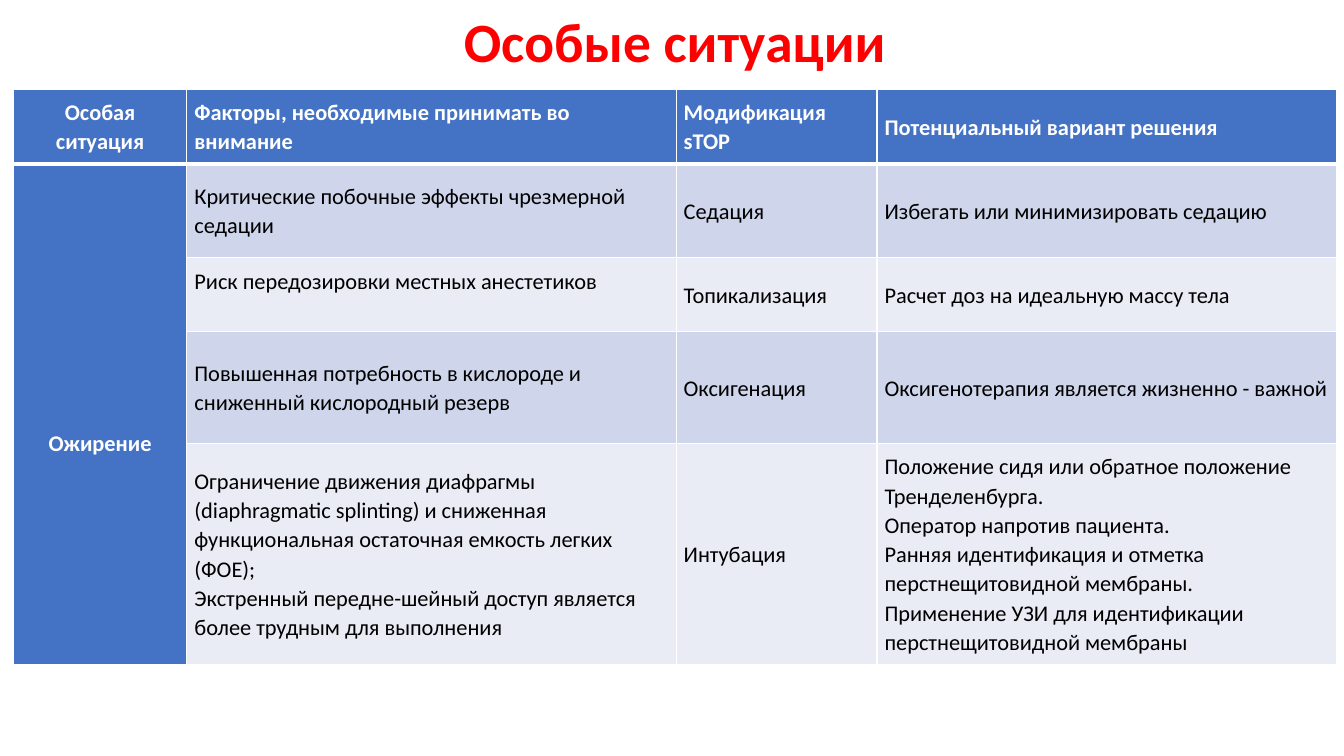
from lxml import etree
from pptx import Presentation
from pptx import util as u
from pptx.dml.color import RGBColor
from pptx.enum import text
from pptx.oxml.ns import qn

HUES = {"title": "FF0000", "head": "4472C4", "odd": "CFD5EA",
        "even": "E9EBF5", "ink": "000000", "white": "FFFFFF"}
COLS = [124, 349.5, 143.5, 328]
ROWS = [53, 67, 53, 80, 157.5]
HEAD = ["Особая ситуация", "Факторы, необходимые принимать во внимание",
        "Модификация sTOP", "Потенциальный вариант решения"]
BODY = [
    ["Ожирение", "Критические побочные эффекты чрезмерной седации",
     "Седация", "Избегать или минимизировать седацию"],
    ["", "Риск передозировки местных анестетиков",
     "Топикализация", "Расчет доз на идеальную массу тела"],
    ["", "Повышенная потребность в кислороде и сниженный кислородный резерв",
     "Оксигенация", "Оксигенотерапия является жизненно - важной"],
    ["", "Ограничение движения диафрагмы (diaphragmatic splinting) и сниженная "
     "функциональная остаточная емкость легких (ФОЕ);\n"
     "Экстренный передне-шейный доступ является более трудным для выполнения",
     "Интубация",
     "Положение сидя или обратное положение Тренделенбурга.\n"
     "Оператор напротив пациента.\n"
     "Ранняя идентификация и отметка перстнещитовидной мембраны.\n"
     "Применение УЗИ для идентификации перстнещитовидной мембраны"],
]


class Deck:
    font = "Calibri"
    size = 16
    pad = 5.4

    def __init__(self, wide, high):
        self.prs = Presentation()
        self.prs.slide_width, self.prs.slide_height = u.Pt(wide), u.Pt(high)
        self.slide = self.prs.slides.add_slide(self.prs.slide_layouts[5])

    def style(self, frame, size, hue, bold, mid, gap):
        for para in frame.paragraphs:
            para.line_spacing = gap
            para.alignment = text.PP_ALIGN.CENTER if mid else text.PP_ALIGN.LEFT
            for run in para.runs:
                run.font.name, run.font.size = self.font, u.Pt(size)
                run.font.bold = bold
                run.font.color.rgb = RGBColor.from_string(HUES[hue])

    def title(self, words, left, top, wide, high):
        box = self.slide.shapes.title
        box.left, box.top = u.Pt(left), u.Pt(top)
        box.width, box.height = u.Pt(wide), u.Pt(high)
        box.text_frame.text = words
        box.text_frame.vertical_anchor = text.MSO_ANCHOR.MIDDLE
        self.style(box.text_frame, 39.6, "title", True, True, 0.9)

    def edges(self, cell, row):
        """Draw white borders, with a thick rule under the header row."""
        props = cell._tc.get_or_add_tcPr()
        thick = {0: "lnB", 1: "lnT"}.get(row)
        for spot, side in enumerate(["lnL", "lnR", "lnT", "lnB"]):
            width = u.Pt(3 if side == thick else 1)
            line = etree.Element(qn("a:" + side), w=str(int(width)))
            fill = etree.SubElement(line, qn("a:solidFill"))
            etree.SubElement(fill, qn("a:srgbClr"), val=HUES["white"])
            props.insert(spot, line)

    def cell(self, cell, words, row, col):
        head = row == 0 or col == 0
        cell.fill.solid()
        hue = "head" if head else "odd" if row % 2 else "even"
        cell.fill.fore_color.rgb = RGBColor.from_string(HUES[hue])
        cell.vertical_anchor = text.MSO_ANCHOR.MIDDLE
        cell.margin_left = cell.margin_right = u.Pt(self.pad)
        cell.margin_top = cell.margin_bottom = u.Pt(self.pad)
        cell.text_frame.text = words
        self.style(cell.text_frame, self.size, "white" if head else "ink",
                   head, col == 0, 1.07)
        self.edges(cell, row)

    def table(self, data, left, top, cols, rows):
        grid = self.slide.shapes.add_table(
            len(rows), len(cols), u.Pt(left), u.Pt(top),
            u.Pt(sum(cols)), u.Pt(sum(rows))).table
        for part, wide in zip(grid.columns, cols):
            part.width = u.Pt(wide)
        for part, high in zip(grid.rows, rows):
            part.height = u.Pt(high)
        for row, line in enumerate(data):
            for col, words in enumerate(line):
                self.cell(grid.cell(row, col), words, row, col)
        return grid


def main():
    deck = Deck(960, 540)
    deck.title("Особые ситуации", 68, 10, 828, 44)
    grid = deck.table([HEAD] + BODY, 9.5, 64, COLS, ROWS)
    group = grid.cell(1, 0)
    group.merge(grid.cell(4, 0))
    group.margin_top = u.Pt(47)
    grid.cell(2, 1).margin_bottom = u.Pt(25)
    deck.prs.save("out.pptx")


if __name__ == "__main__":
    main()
